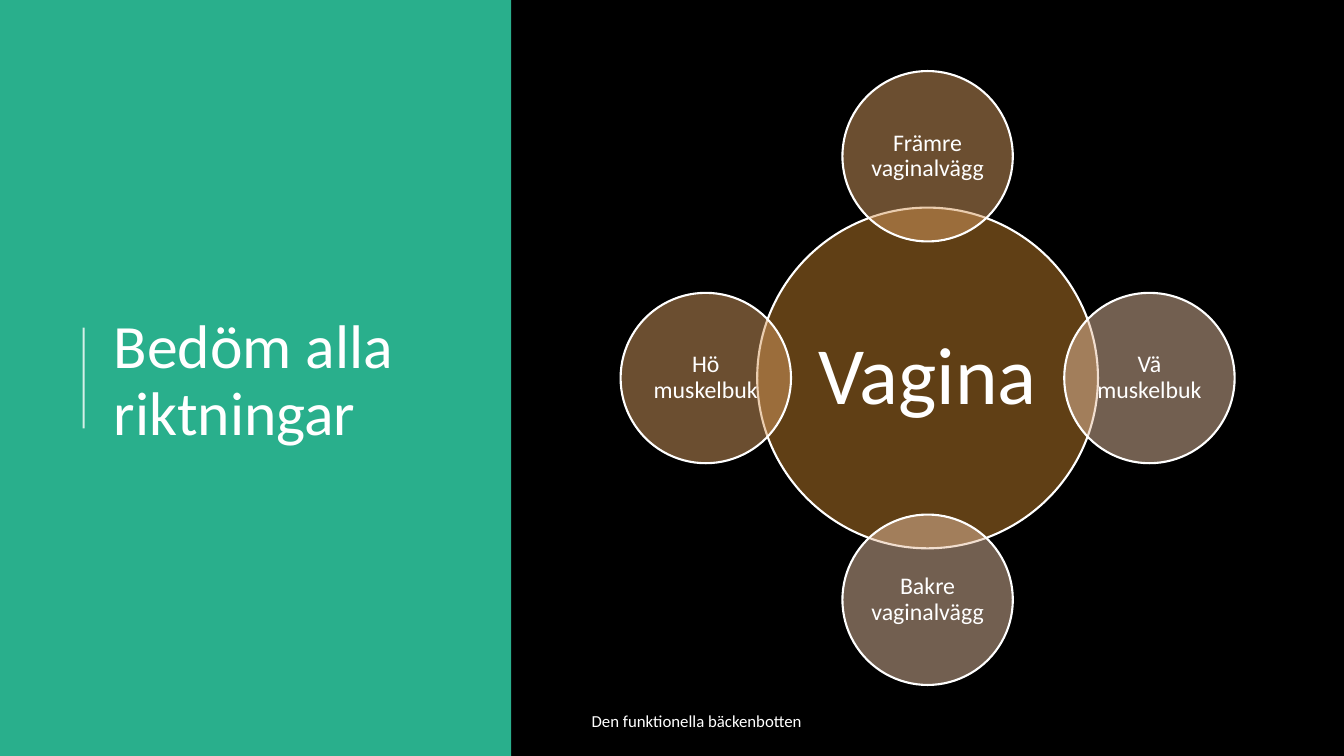
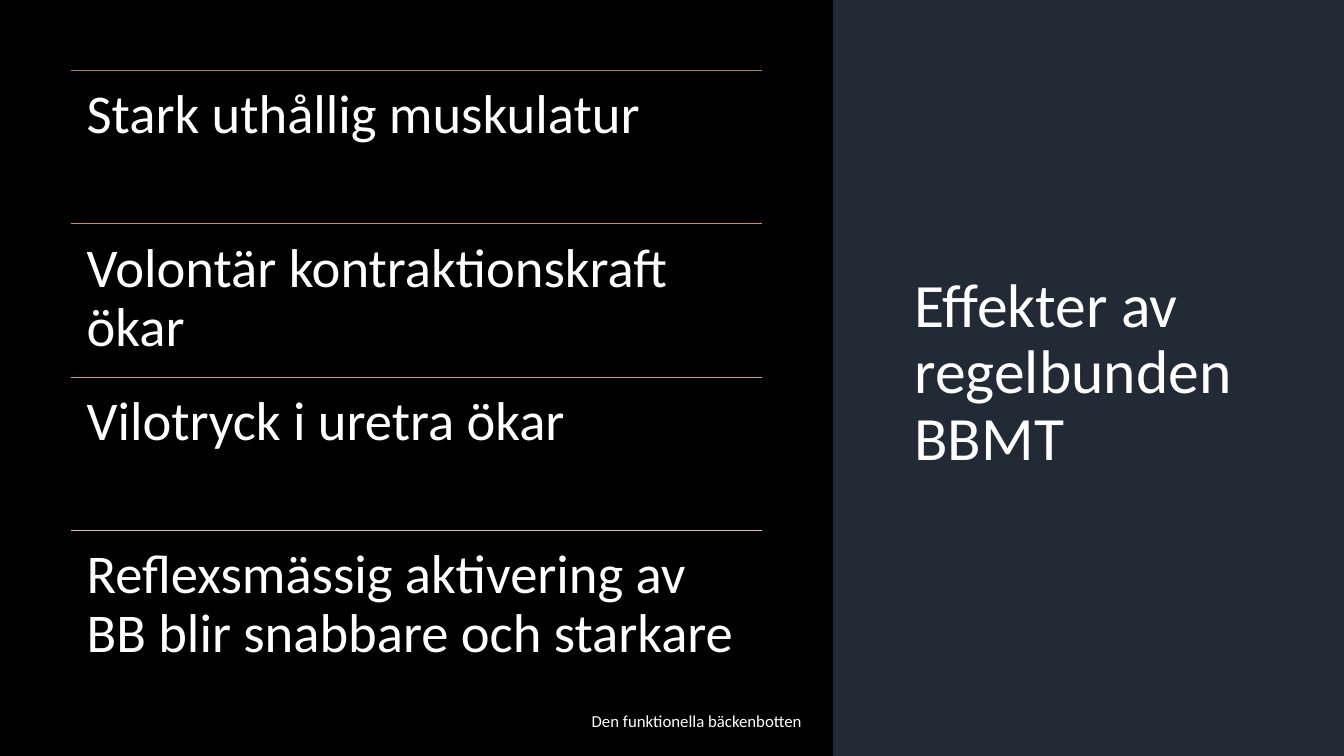
"""Build two dark slides on pelvic floor training."""
import dataclasses
import lxml.etree
import pptx
import pptx.dml.color
import pptx.enum.shapes
import pptx.enum.text
import pptx.oxml.ns
import pptx.util

Inches = pptx.util.Inches
Pt = pptx.util.Pt
qn = pptx.oxml.ns.qn
Align = pptx.enum.text.PP_ALIGN
Anchor = pptx.enum.text.MSO_ANCHOR
Shape = pptx.enum.shapes.MSO_SHAPE


@dataclasses.dataclass(frozen=True)
class Theme:
    """Hold the colours, font and type sizes of the deck."""
    font: str = "Calibri"
    black: str = "000000"
    white: str = "FFFFFF"
    green: str = "29AF8C"
    navy: str = "222A35"
    brown: str = "C17F2A"
    tan: str = "D79C61"
    sand: str = "E4BEA1"
    rules: tuple = ("C17F2A", "D49048", "DAA472", "E3BA9B")
    title: int = 44
    hub: int = 58
    node: int = 17
    item: int = 39
    foot: int = 12
    tight: float = 0.9


THEME = Theme()
WIDTH, HEIGHT = 13.33, 7.5
BAND = 5.07
FOOTER = "Den funktionella bäckenbotten"
HUB = (9.2, 3.75)
ORBIT = 2.2
NODES = (
    ("Främre vaginalvägg", 0, -1, THEME.tan),
    ("Vä muskelbuk", 1, 0, THEME.sand),
    ("Bakre vaginalvägg", 0, 1, THEME.sand),
    ("Hö muskelbuk", -1, 0, THEME.tan),
)
ITEMS = (
    "Stark uthållig muskulatur",
    "Volontär kontraktionskraft ökar",
    "Vilotryck i uretra ökar",
    "Reflexsmässig aktivering av BB blir snabbare och starkare",
)


def rgb(code):
    """Turn a hex code into a colour."""
    return pptx.dml.color.RGBColor.from_string(code)


def paint(fill, code):
    """Fill with one solid colour."""
    fill.solid()
    fill.fore_color.rgb = rgb(code)


def fade(shape, share):
    """Set the opacity of the first colour of a shape, in percent."""
    color = shape.element.find(".//" + qn("a:srgbClr"))
    lxml.etree.SubElement(color, qn("a:alpha")).set("val", str(share * 1000))


def write(shape, text, size, align=Align.LEFT, anchor=Anchor.MIDDLE,
          inset=None, space=THEME.tight):
    """Set and format the text of a shape."""
    frame = shape.text_frame
    frame.text = text
    frame.word_wrap = True
    frame.auto_size = pptx.enum.text.MSO_AUTO_SIZE.NONE
    frame.vertical_anchor = anchor
    if inset is not None:
        frame.margin_left = frame.margin_right = Inches(inset)
        frame.margin_top = frame.margin_bottom = Inches(inset)
    for para in frame.paragraphs:
        para.alignment = align
        para.line_spacing = space
        for run in para.runs:
            run.font.name = THEME.font
            run.font.size = Pt(size)
            run.font.color.rgb = rgb(THEME.white)


def add_text(slide, box, text, size, **style):
    """Add a text box."""
    shape = slide.shapes.add_textbox(*map(Inches, box))
    write(shape, text, size, **style)


def add_rule(slide, start, end, code, weight):
    """Add a straight line without shadow."""
    rule = slide.shapes.add_connector(
        pptx.enum.shapes.MSO_CONNECTOR.STRAIGHT, *map(Inches, start + end))
    rule.line.color.rgb = rgb(code)
    rule.line.width = Pt(weight)
    lxml.etree.SubElement(rule.element.spPr, qn("a:effectLst"))
    return rule


def add_disc(slide, center, size, code, text, points, inset):
    """Add a half transparent circle with a centred label."""
    left, top = (mid - size / 2 for mid in center)
    disc = slide.shapes.add_shape(
        Shape.OVAL, *map(Inches, (left, top, size, size)))
    disc.shadow.inherit = False
    paint(disc.fill, code)
    fade(disc, 50)
    disc.line.color.rgb = rgb(THEME.white)
    disc.line.width = Pt(1.5)
    write(disc, text, points, align=Align.CENTER, inset=inset)


def add_slide(deck, title, box, left, code):
    """Add a slide with a side band, a title and the footer."""
    slide = deck.slides.add_slide(deck.slide_layouts[5])
    head = slide.shapes.title
    head.left, head.top, head.width, head.height = map(Inches, box)
    write(head, title, THEME.title)
    band = slide.shapes.add_shape(
        Shape.RECTANGLE, *map(Inches, (left, 0, BAND, HEIGHT)))
    band.shadow.inherit = False
    paint(band.fill, code)
    band.line.fill.background()
    head.element.addprevious(band.element)
    add_text(slide, (5.77, 6.95, 3.14, 0.4), FOOTER, THEME.foot, space=1.0)
    return slide


def add_wheel(deck):
    """Add the slide with four circles around a hub."""
    slide = add_slide(deck, "Bedöm alla riktningar",
                      (1.03, 0.78, 3.69, 6.02), 0, THEME.green)
    mark = add_rule(slide, (0.83, 3.25), (0.83, 4.25), THEME.white, 1.5)
    fade(mark, 80)
    add_disc(slide, HUB, 3.38, THEME.brown, "Vagina", THEME.hub, 0.08)
    for text, across, down, code in NODES:
        center = (HUB[0] + across * ORBIT, HUB[1] + down * ORBIT)
        add_disc(slide, center, 1.69, code, text, THEME.node, 0.02)


def add_list(deck):
    """Add the slide with ruled statements."""
    slide = add_slide(deck, "Effekter av regelbunden BBMT",
                      (8.97, 0.7, 4.01, 6.02), WIDTH - BAND, THEME.navy)
    left, first, width, step = 0.7, 0.7, 6.86, 1.52
    for row, (text, code) in enumerate(zip(ITEMS, THEME.rules)):
        top = first + row * step
        add_rule(slide, (left, top), (left + width, top), code, 0.5)
        add_text(slide, (left, top, width, step), text, THEME.item,
                 anchor=Anchor.TOP, inset=0.16)


def main():
    """Build and save the deck."""
    deck = pptx.Presentation()
    deck.slide_width, deck.slide_height = Inches(WIDTH), Inches(HEIGHT)
    paint(deck.slide_master.background.fill, THEME.black)
    add_wheel(deck)
    add_list(deck)
    deck.save("out.pptx")


if __name__ == "__main__":
    main()
